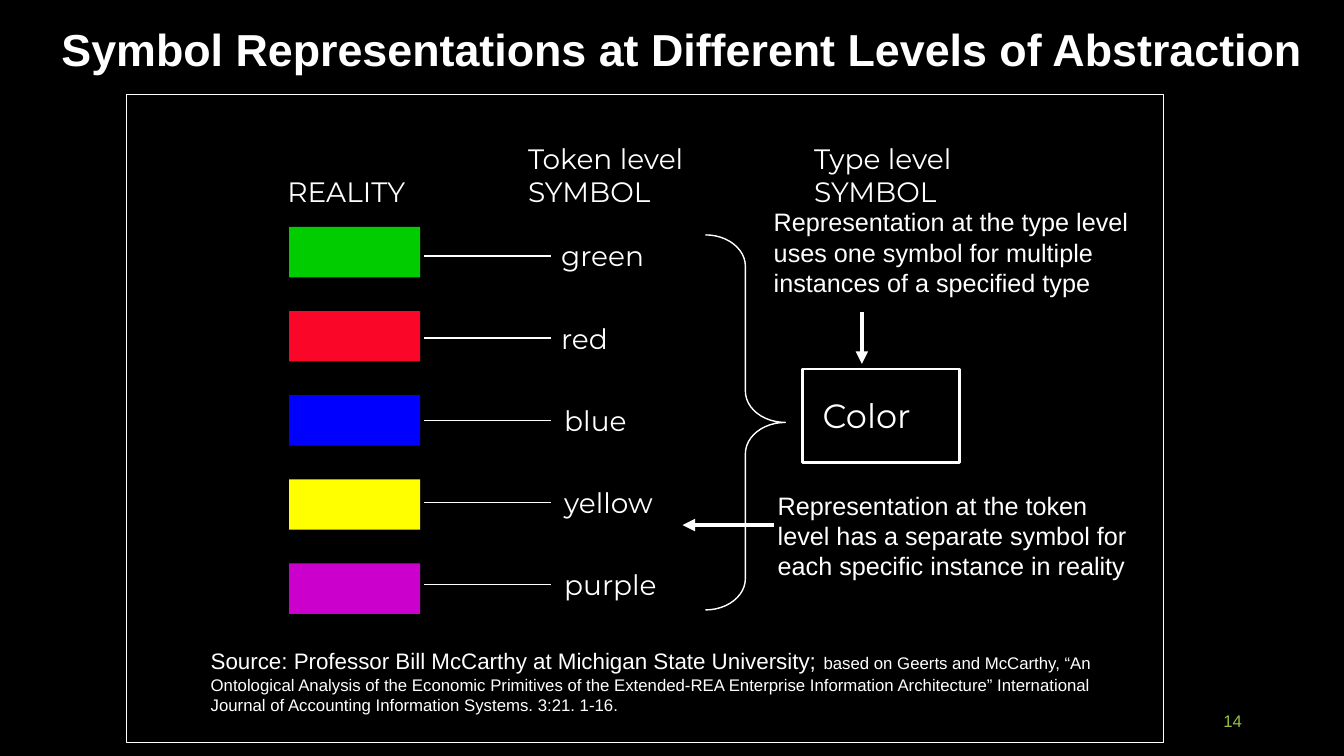
from lxml import etree
from pptx import Presentation
from pptx.dml.color import RGBColor
from pptx.enum.shapes import MSO_CONNECTOR as CONN, MSO_SHAPE as SHAPE
from pptx.enum.text import MSO_ANCHOR as ANCHOR, PP_ALIGN as ALIGN
from pptx.oxml.ns import qn
from pptx.util import Cm, Pt

BLACK, WHITE, LIME = "000000", "FFFFFF", "97BE49"
SANS, DISPLAY = "Arial", "Montserrat"
INSET = (0.25, 0.13, 0.25, 0.13)
NO_INSET = (0, 0, 0, 0)


def rgb(color):
    return RGBColor.from_string(color)


def write(sp, text, size=20, font=DISPLAY, color=WHITE, bold=False,
          align=ALIGN.LEFT, anchor=ANCHOR.TOP, inset=INSET):
    """Fill a shape with one paragraph; text is a string or (string, size) pairs."""
    tf = sp.text_frame
    tf.word_wrap = True
    tf.vertical_anchor = anchor
    tf.margin_left, tf.margin_top, tf.margin_right, tf.margin_bottom = map(Cm, inset)
    p = tf.paragraphs[0]
    p.alignment = align
    for part, part_size in [(text, size)] if isinstance(text, str) else text:
        r = p.add_run()
        r.text = part
        r.font.name, r.font.size, r.font.bold = font, Pt(part_size), bold
        r.font.color.rgb = rgb(color)


class Board:
    """Current slide and its white-on-black style."""

    def __init__(self, s):
        self.s = s
        s.background.fill.solid()
        s.background.fill.fore_color.rgb = rgb(BLACK)

    def text(self, x, y, w, h, text, **fmt):
        sp = self.s.shapes.add_textbox(Cm(x), Cm(y), Cm(w), Cm(h))
        write(sp, text, **fmt)

    def shape(self, x, y, w, h, kind=SHAPE.RECTANGLE, fill=None, line=None):
        sp = self.s.shapes.add_shape(kind, Cm(x), Cm(y), Cm(w), Cm(h))
        sp.shadow.inherit = False
        if fill:
            sp.fill.solid()
            sp.fill.fore_color.rgb = rgb(fill)
        else:
            sp.fill.background()
        if line:
            sp.line.color.rgb = rgb(WHITE)
            sp.line.width = Pt(line)
        else:
            sp.line.fill.background()
        return sp

    def line(self, x1, y1, x2, y2, width=1, arrow=False):
        c = self.s.shapes.add_connector(CONN.STRAIGHT, Cm(x1), Cm(y1), Cm(x2), Cm(y2))
        c.line.color.rgb = rgb(WHITE)
        c.line.width = Pt(width)
        if arrow:
            etree.SubElement(c.line._get_or_add_ln(), qn("a:tailEnd"), type="triangle")
        etree.SubElement(c._element.spPr, qn("a:effectLst"))


def build(board):
    # Frame and title
    board.shape(3.18, 2.39, 26.14, 16.33, fill=BLACK, line=0.75)
    board.text(1.3, 0.43, 32.28, 1.63,
               "Symbol Representations at Different Levels of Abstraction",
               size=32, font=SANS, bold=True)

    # Column headings
    board.text(7.24, 4.39, 4.8, 0.84, "REALITY", inset=NO_INSET)
    board.text(13.31, 3.56, 5, 1.7, "Token level SYMBOL", inset=NO_INSET)
    board.text(20.52, 3.56, 4.6, 1.7, "Type level SYMBOL", inset=NO_INSET)

    # Colours in reality, each joined to its token
    tokens = [("green", "00CC00", 13.89), ("red", "FA0629", 13.89),
              ("blue", "0000FF", 13.97), ("yellow", "FFFF00", 13.97),
              ("purple", "CC00CC", 13.97)]
    for i, (name, color, label_x) in enumerate(tokens):
        line_y = 6.45 + 2.07 * i
        board.shape(7.29, 5.72 + 2.12 * i, 3.3, 1.27, fill=color)
        board.line(10.69, line_y, 13.89, line_y)
        board.text(label_x, line_y - 0.56, 3.81, 1.09, name)

    # Brace and the type symbol
    brace = board.shape(17.78, 5.92, 2.01, 9.45, kind=SHAPE.RIGHT_BRACE, line=1)
    brace.adjustments[0] = 0.393
    type_box = board.shape(20.22, 9.3, 3.96, 2.36, line=2)
    write(type_box, "Color", size=24, inset=(0.51, 0.64, 0.51, 0.64))

    # Explanations with arrows
    board.text(19.25, 5.08, 9.8, 2.57,
               "Representation at the type level uses one symbol for multiple "
               "instances of a specified type", size=18, font=SANS)
    board.line(21.72, 7.87, 21.72, 9.17, width=3, arrow=True)
    board.text(19.35, 12.22, 9.58, 2.57,
               "Representation at the token level has a separate symbol for "
               "each specific instance in reality", size=18, font=SANS)
    board.line(19.51, 13.23, 17.2, 13.23, width=3, arrow=True)

    # Source and slide number
    board.text(5.31, 16.23, 23.65, 1.8, [
        ("Source: Professor Bill McCarthy at Michigan State University;", 16),
        (" ", 18),
        ("based on Geerts and McCarthy, “An Ontological Analysis of the Economic "
         "Primitives of the Extended-REA Enterprise Information Architecture” "
         "International Journal of Accounting Information Systems. 3:21. 1-16.", 12),
    ], font=SANS, inset=NO_INSET)
    board.text(23.93, 17.65, 7.62, 1.02, "14", size=12, font=SANS, color=LIME,
               align=ALIGN.RIGHT, anchor=ANCHOR.MIDDLE)


def main():
    prs = Presentation()
    prs.slide_width, prs.slide_height = Cm(33.87), Cm(19.05)
    build(Board(prs.slides.add_slide(prs.slide_layouts[6])))
    prs.save("out.pptx")


if __name__ == "__main__":
    main()
